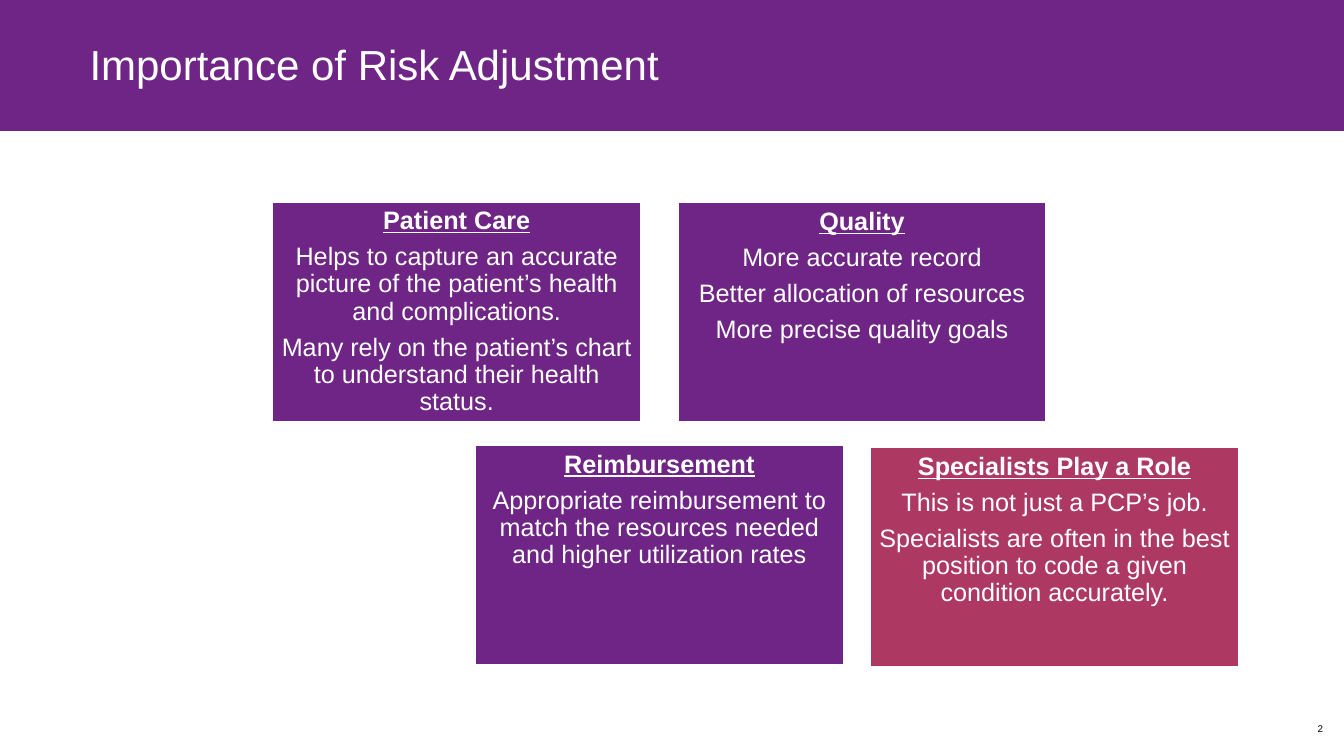
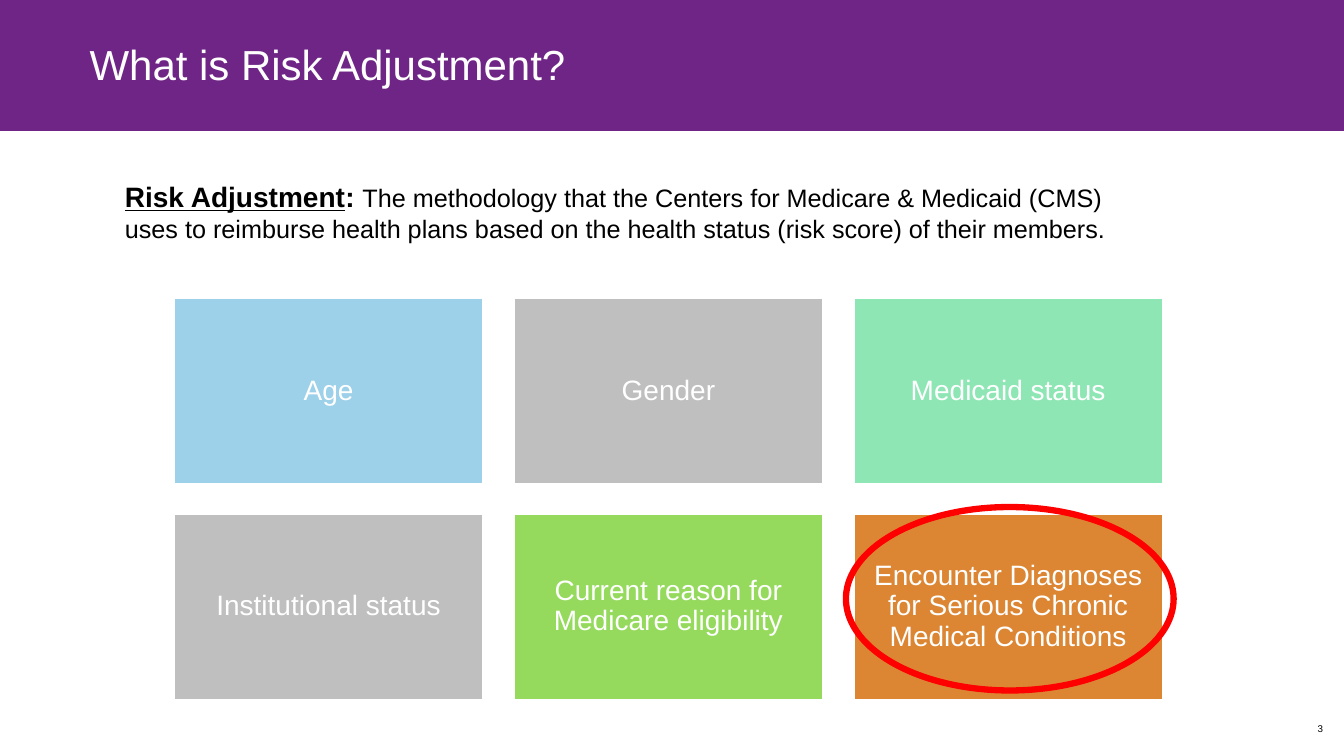
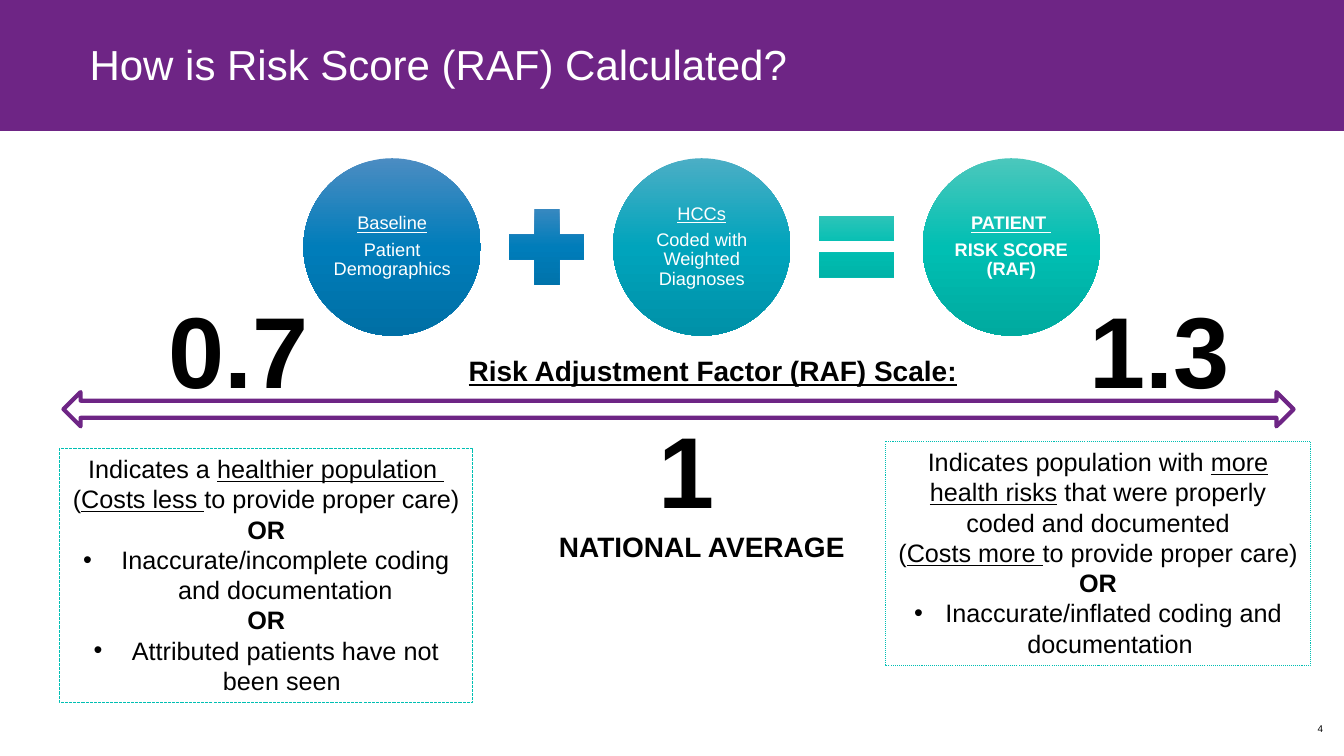
"""Build three slides on risk adjustment in health care."""
from copy import deepcopy
from typing import NamedTuple

from pptx import Presentation
from pptx import util as u
from pptx.dml.color import RGBColor
from pptx.enum import dml, shapes, text
from pptx.oxml.ns import qn

I = u.Inches
SHAPE = shapes.MSO_SHAPE
MIDDLE, TOP = text.MSO_ANCHOR.MIDDLE, text.MSO_ANCHOR.TOP
LEFT, CENTER, RIGHT = text.PP_ALIGN.LEFT, text.PP_ALIGN.CENTER, text.PP_ALIGN.RIGHT
DASH = dml.MSO_LINE


class Theme:
    font = "Arial"
    purple, berry, teal, red = "6E2585", "AD3963", "00BFB3", "FF0000"
    white, black = "FFFFFF", "000000"
    sky, grey, mint, lime, orange = "9DD0E9", "BFBFBF", "8EE6B5", "95DA5D", "DC8633"
    blue_fade = ("4B8CC2", "007DBA", "006FA5")
    cyan_fade = ("4BAEC5", "00A4BC", "0091A8")
    teal_fade = ("4BC7BC", "00BFB3", "00AA9F")
    title, body, label, circle, figure, number = 30, 18, 20, 13, 72, 7


class Para(NamedTuple):
    runs: tuple
    indent: float = 0


def plain(*lines):
    return [Para(((line, ""),)) for line in lines]


def headed(heading, *lines, style="bu"):
    return [Para(((heading, style),)), *plain(*lines)]


OR = Para((("OR", "b"),))

BENEFITS = [
    (2.7, 2, Theme.purple, MIDDLE, headed(
        "Patient Care",
        "Helps to capture an accurate picture of the patient’s health and complications.",
        "Many rely on the patient’s chart to understand their health status.")),
    (6.72, 2, Theme.purple, TOP, headed(
        "Quality", "More accurate record", "Better allocation of resources",
        "More precise quality goals")),
    (4.71, 4.41, Theme.purple, TOP, headed(
        "Reimbursement",
        "Appropriate reimbursement to match the resources needed and higher utilization rates")),
    (8.63, 4.43, Theme.berry, TOP, headed(
        "Specialists Play a Role", "This is not just a PCP’s job.",
        "Specialists are often in the best position to code a given condition accurately.")),
]

DEFINITION = [Para((
    ("Risk Adjustment", "bu", Theme.label), (": ", "b", Theme.label),
    ("The methodology that the Centers for Medicare & Medicaid (CMS) uses to reimburse "
     "health plans based on the health status (risk score) of their members.", "")))]

FACTORS = [
    ("Age", Theme.sky), ("Gender", Theme.grey), ("Medicaid status", Theme.mint),
    ("Institutional status", Theme.grey),
    ("Current reason for Medicare eligibility", Theme.lime),
    ("Encounter Diagnoses for Serious Chronic Medical Conditions", Theme.orange),
]

TERMS = [
    (headed("Baseline", "Patient Demographics", style="u"), Theme.blue_fade),
    (headed("HCCs", "Coded with Weighted Diagnoses", style="u"), Theme.cyan_fade),
    ([Para((("PATIENT ", "bu"),)), Para((("RISK SCORE (RAF)", "b"),))], Theme.teal_fade),
]
OPERATORS = [(SHAPE.MATH_PLUS, Theme.blue_fade), (SHAPE.MATH_EQUAL, Theme.teal_fade)]

SCALE_LABELS = [
    ((4.55, 3.46, 5.14, 0.44), "Risk Adjustment Factor (RAF) Scale:", "bu", Theme.label, LEFT),
    ((1.57, 2.81, 1.83, 1.31), "0.7", "b", Theme.figure, LEFT),
    ((6.43, 4, 0.61, 1.31), "1", "b", Theme.figure, LEFT),
    ((10.71, 2.81, 1.83, 1.31), "1.3", "b", Theme.figure, LEFT),
    ((5.44, 5.2, 3.04, 0.44), "NATIONAL AVERAGE ", "b", Theme.label, CENTER),
]

MEANINGS = [
    ((0.59, 4.45, 4.1, 2.52), DASH.SQUARE_DOT, [
        Para((("Indicates a ", ""), ("healthier population ", "u"))),
        Para((("(", ""), ("Costs less ", "u"), ("to provide proper care)", ""))),
        OR,
        Para((("Inaccurate/incomplete coding and documentation", ""),), 0.38),
        OR,
        Para((("Attributed patients have not been seen ", ""),), 0.38)]),
    ((8.78, 4.38, 4.22, 2.22), DASH.ROUND_DOT, [
        Para((("Indicates population with ", ""), ("more health risks", "u"),
              (" that were properly coded and documented", ""))),
        Para((("(", ""), ("Costs more ", "u"), ("to provide proper care)", ""))),
        OR,
        Para((("Inaccurate/inflated coding and documentation ", ""),), 0.31)]),
]


def rgb(color):
    return RGBColor.from_string(color)


def set_bullet(p, indent):
    pPr = p._p.get_or_add_pPr()
    pPr.set("marL", str(I(indent)))
    pPr.set("indent", str(-I(indent)))
    pPr.append(pPr.makeelement(qn("a:buFont"), {"typeface": Theme.font}))
    pPr.append(pPr.makeelement(qn("a:buChar"), {"char": "•"}))


def write(sp, paras, size, color=Theme.black, align=LEFT, anchor=TOP,
          inset=None, spacing=None, gap=0):
    tf = sp.text_frame
    frame = {"word_wrap": True, "vertical_anchor": anchor}
    if inset is not None:
        frame |= {f"margin_{side}": I(inset) for side in ("left", "top", "right", "bottom")}
    for name, value in frame.items():
        setattr(tf, name, value)
    for i, para in enumerate(paras):
        p = tf.add_paragraph() if i else tf.paragraphs[0]
        layout = {"alignment": align, "line_spacing": spacing, "space_after": u.Pt(size * gap)}
        for name, value in layout.items():
            setattr(p, name, value)
        if para.indent:
            set_bullet(p, para.indent)
        for words, style, *own_size in para.runs:
            r = p.add_run()
            r.text = words
            look = {"name": Theme.font, "size": u.Pt(own_size[0] if own_size else size),
                    "bold": "b" in style, "underline": "u" in style}
            for name, value in look.items():
                setattr(r.font, name, value)
            r.font.color.rgb = rgb(color)


def add_text(s, box, paras, size, **fmt):
    write(s.shapes.add_textbox(*map(I, box)), paras, size, **fmt)


def add_shape(s, kind, box, fill=None, line=None, width=1, dash=None):
    sp = s.shapes.add_shape(kind, *map(I, box))
    sp.shadow.inherit = False
    if fill is None:
        sp.fill.background()
    elif isinstance(fill, str):
        sp.fill.solid()
        sp.fill.fore_color.rgb = rgb(fill)
    else:
        fade(sp, fill)
    if line:
        sp.line.color.rgb = rgb(line)
        sp.line.width = u.Pt(width)
        if dash:
            sp.line.dash_style = dash
    else:
        sp.line.fill.background()
    return sp


def fade(sp, colors):
    sp.fill.gradient()
    sp.fill.gradient_angle = 270
    stops = sp._element.spPr.find(f".//{qn('a:gsLst')}")
    stops.append(deepcopy(stops[0]))
    for i, (stop, color) in enumerate(zip(sp.fill.gradient_stops, colors)):
        stop.color.rgb = rgb(color)
        stop.position = i / 2


def add_slide(prs, title, number):
    s = prs.slides.add_slide(prs.slide_layouts[6])
    add_shape(s, SHAPE.RECTANGLE, (-0.01, -0.07, 13.35, 1.37), Theme.purple)
    add_text(s, (0.79, 0, 11.5, 1.33), plain(title), Theme.title,
             color=Theme.white, anchor=MIDDLE, spacing=0.9)
    add_text(s, (9.59, 7.03, 3.63, 0.4), plain(str(number)), Theme.number,
             align=RIGHT, anchor=MIDDLE)
    return s


def write_card(sp, paras, size, inset, anchor=MIDDLE):
    write(sp, paras, size, Theme.white, CENTER, anchor, inset, spacing=0.9, gap=0.35)


def build_importance(s):
    for x, y, fill, anchor, paras in BENEFITS:
        sp = add_shape(s, SHAPE.RECTANGLE, (x, y, 3.66, 2.19), fill, Theme.white, 1.5)
        write_card(sp, paras, Theme.body, 0.07, anchor)


def build_factors(s):
    add_text(s, (1.14, 1.73, 10.18, 0.74), DEFINITION, Theme.body)
    left, top, w, h, col_gap, row_gap = 1.73, 2.96, 3.06, 1.84, 0.31, 0.3
    for i, (label, fill) in enumerate(FACTORS):
        row, col = divmod(i, 3)
        box = (left + col * (w + col_gap), top + row * (h + row_gap), w, h)
        sp = add_shape(s, SHAPE.RECTANGLE, box, fill, Theme.white)
        write_card(sp, plain(label), Theme.label, 0.08)
    add_shape(s, SHAPE.OVAL, (8.39, 5.03, 3.25, 1.82), line=Theme.red, width=4.5)


def build_score(s):
    left, top, circle, sign, pitch = 3.01, 1.57, 1.76, 1.02, 3.07
    for i, (paras, fill) in enumerate(TERMS):
        sp = add_shape(s, SHAPE.OVAL, (left + i * pitch, top, circle, circle), fill)
        write_card(sp, paras, Theme.circle, 0.02)
    for i, (kind, fill) in enumerate(OPERATORS):
        x = left + i * pitch + (pitch + circle - sign) / 2
        add_shape(s, kind, (x, top + (circle - sign) / 2, sign, sign), fill)
    add_shape(s, SHAPE.LEFT_RIGHT_ARROW, (0.63, 3.89, 12.2, 0.34), line=Theme.purple, width=3)
    for box, words, style, size, align in SCALE_LABELS:
        add_text(s, box, [Para(((words, style),))], size, align=align)
    for box, dash, paras in MEANINGS:
        sp = add_shape(s, SHAPE.RECTANGLE, box, line=Theme.teal, width=0.75, dash=dash)
        write(sp, paras, Theme.body, align=CENTER)


SLIDES = [
    ("Importance of Risk Adjustment", build_importance),
    ("What is Risk Adjustment?", build_factors),
    ("How is Risk Score (RAF) Calculated?", build_score),
]


def main():
    prs = Presentation()
    prs.slide_width, prs.slide_height = I(13.33), I(7.5)
    for number, (title, build) in enumerate(SLIDES, start=2):
        build(add_slide(prs, title, number))
    prs.save("out.pptx")


if __name__ == "__main__":
    main()
